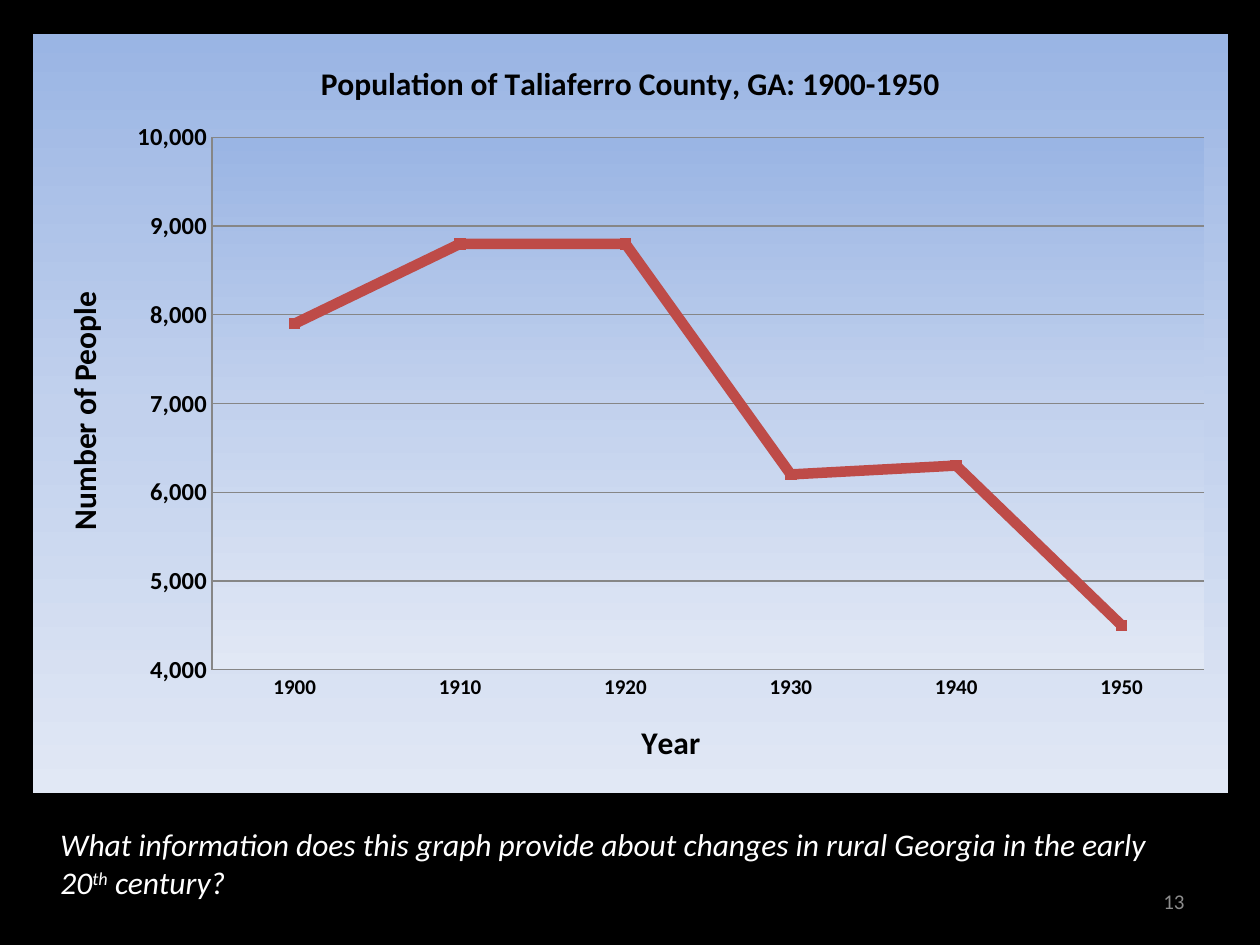
from lxml import etree
from pptx import Presentation
from pptx.chart.data import CategoryChartData
from pptx.dml.color import RGBColor
from pptx.enum.chart import XL_CHART_TYPE, XL_MARKER_STYLE, XL_TICK_MARK
from pptx.enum.text import MSO_ANCHOR, PP_ALIGN
from pptx.oxml import parse_xml
from pptx.oxml.ns import qn
from pptx.util import Cm, Pt

LINE_MARKERS = XL_CHART_TYPE.LINE_MARKERS
SQUARE = XL_MARKER_STYLE.SQUARE
NO_TICK = XL_TICK_MARK.NONE
MIDDLE = MSO_ANCHOR.MIDDLE
RIGHT = PP_ALIGN.RIGHT

BLACK = RGBColor(0x00, 0x00, 0x00)
WHITE = RGBColor(0xFF, 0xFF, 0xFF)
GRAY = RGBColor(0x8C, 0x8C, 0x8C)
GRID_GRAY = RGBColor(0x86, 0x86, 0x86)
RED = RGBColor(0xBE, 0x4B, 0x48)
SKY = [(0, RGBColor(0x9A, 0xB5, 0xE4)), (50, RGBColor(0xC2, 0xD1, 0xED)),
       (100, RGBColor(0xE1, 0xE8, 0xF5))]
FONT = "Calibri"


def sky_fill():
    stops = "".join(f'<a:gs pos="{pos * 1000}"><a:srgbClr val="{color}"/></a:gs>'
                    for pos, color in SKY)
    return parse_xml(
        '<c:spPr xmlns:c="http://schemas.openxmlformats.org/drawingml/2006/chart" '
        'xmlns:a="http://schemas.openxmlformats.org/drawingml/2006/main">'
        f'<a:gradFill rotWithShape="1"><a:gsLst>{stops}</a:gsLst>'
        '<a:lin ang="5400000" scaled="0"/></a:gradFill>'
        '<a:ln><a:noFill/></a:ln></c:spPr>')


def add_run(paragraph, text, size, color, bold=False, italic=False):
    run = paragraph.add_run()
    run.text = text
    font = run.font
    font.name, font.size, font.bold, font.italic = FONT, Pt(size), bold, italic
    font.color.rgb = color
    return run


prs = Presentation()
prs.slide_width, prs.slide_height = Cm(25.4), Cm(19.05)
slide = prs.slides.add_slide(prs.slide_layouts[6])
slide.background.fill.solid()
slide.background.fill.fore_color.rgb = BLACK

page_number = slide.shapes.add_textbox(Cm(18.21), Cm(17.65), Cm(5.92), Cm(1.02)).text_frame
page_number.word_wrap = True
page_number.vertical_anchor = MIDDLE
page_number.paragraphs[0].alignment = RIGHT
add_run(page_number.paragraphs[0], "13", 12, GRAY)

population = CategoryChartData(number_format="#,##0")
population.categories = ["1900", "1910", "1920", "1930", "1940", "1950"]
population.add_series("Series 1", [7900, 8800, 8800, 6200, 6300, 4500])
chart = slide.shapes.add_chart(LINE_MARKERS, Cm(0.66), Cm(0.69), Cm(24.1), Cm(15.29),
                               population).chart
chart.has_legend = False
chart.font.name, chart.font.size = FONT, Pt(10)
chart.font.color.rgb = BLACK
chart.has_title = True
add_run(chart.chart_title.text_frame.paragraphs[0],
        "Population of Taliaferro County, GA: 1900-1950", 18, BLACK, bold=True)

years, people = chart.category_axis, chart.value_axis
for axis, heading, label_size in [(years, "Year", 12), (people, "Number of People", 14)]:
    axis.has_title = True
    add_run(axis.axis_title.text_frame.paragraphs[0], heading, 18, BLACK, bold=True)
    axis.major_tick_mark = axis.minor_tick_mark = NO_TICK
    labels = axis.tick_labels.font
    labels.name, labels.size, labels.bold = FONT, Pt(label_size), True
    labels.color.rgb = BLACK
    axis.format.line.color.rgb = GRID_GRAY
    axis.format.line.width = Pt(0.75)
people.minimum_scale, people.maximum_scale, people.major_unit = 4000, 10000, 1000
people.tick_labels.number_format = "#,##0"
people.tick_labels.number_format_is_linked = False
people.has_major_gridlines = True
people.major_gridlines.format.line.color.rgb = GRID_GRAY
people.major_gridlines.format.line.width = Pt(0.75)

chart.plots[0].vary_by_categories = False
trend = chart.plots[0].series[0]
trend.smooth = False
trend.format.line.color.rgb = RED
trend.format.line.width = Pt(6)
trend.marker.style, trend.marker.size = SQUARE, 6
trend.marker.format.fill.solid()
trend.marker.format.fill.fore_color.rgb = RED
trend.marker.format.line.color.rgb = RED

chart_xml = chart._chartSpace.find(qn("c:chart"))
chart_xml.addnext(sky_fill())
plot_area = chart_xml.find(qn("c:plotArea"))
plot_area.append(sky_fill())
for automatic in plot_area.findall(qn("c:layout")):
    plot_area.remove(automatic)
layout = etree.Element(qn("c:layout"))
plot_area.insert(0, layout)
manual = etree.SubElement(layout, qn("c:manualLayout"))
for tag, value in [("layoutTarget", "inner"), ("xMode", "edge"), ("yMode", "edge"),
                   ("x", "0.15"), ("y", "0.136"), ("w", "0.83"), ("h", "0.702")]:
    etree.SubElement(manual, qn(f"c:{tag}")).set("val", value)

question = slide.shapes.add_textbox(Cm(0.97), Cm(16.51), Cm(23.5), Cm(1.8)).text_frame
question.word_wrap = True
for text, baseline in [
        ("What information does this graph provide about changes in rural Georgia "
         "in the early 20", 0), ("th", 30000), (" century?", 0)]:
    run = add_run(question.paragraphs[0], text, 18, WHITE, italic=True)
    run.font._element.set("baseline", str(baseline))

prs.save("out.pptx")
